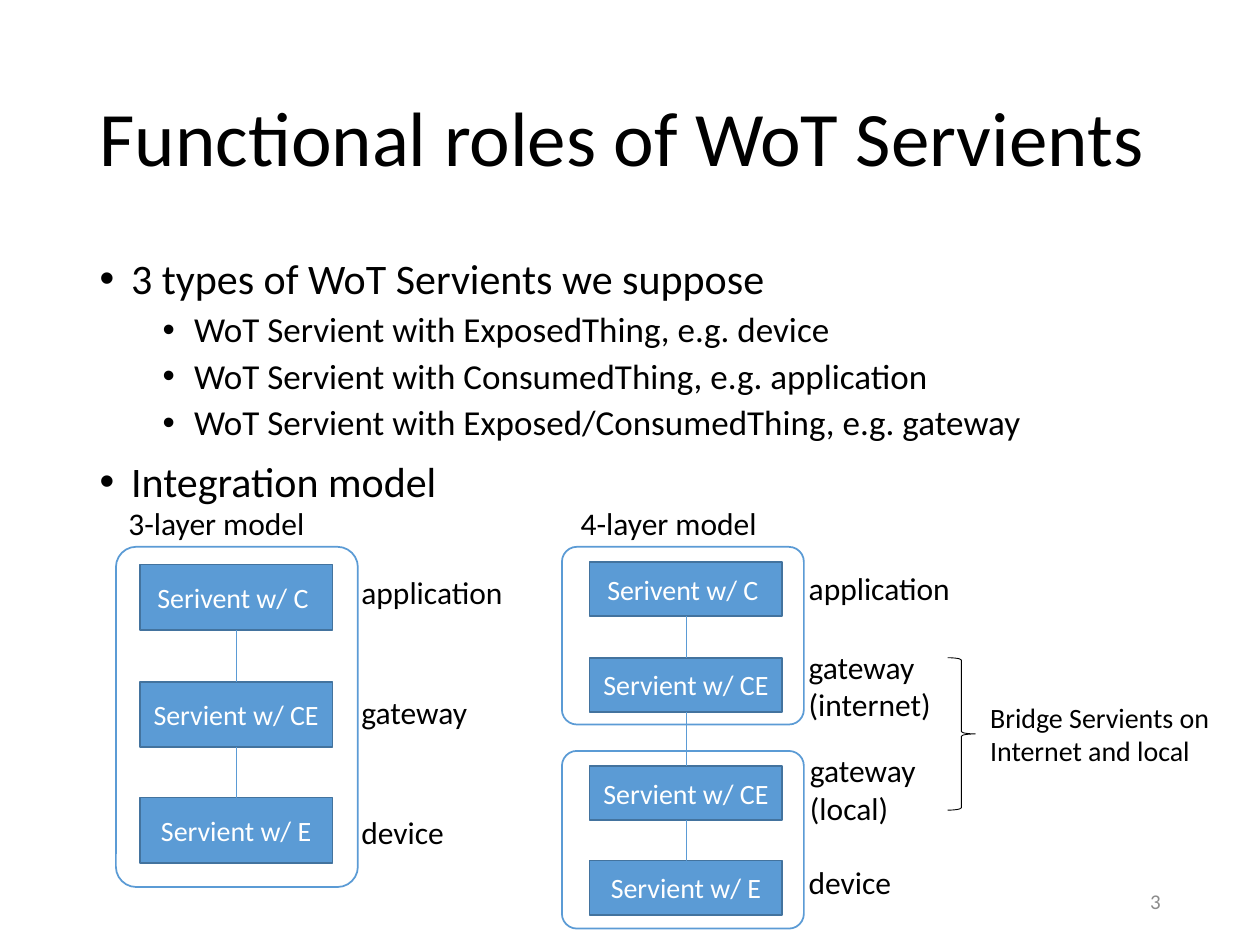
import pptx
import pptx.dml.color
import pptx.enum.shapes
import pptx.enum.text
import pptx.oxml
import pptx.oxml.ns
import pptx.util
from lxml import etree

Inches, Pt = pptx.util.Inches, pptx.util.Pt
SHAPES = pptx.enum.shapes.MSO_SHAPE
ALIGN = pptx.enum.text.PP_ALIGN
ANCHOR = pptx.enum.text.MSO_ANCHOR
FIT = pptx.enum.text.MSO_AUTO_SIZE
COLORS = {
    name: pptx.dml.color.RGBColor.from_string(value)
    for name, value in {
        "text": "000000", "servient": "5B9BD5", "edge": "43739E",
        "white": "FFFFFF", "number": "8C8C8C",
    }.items()
}


def write(paragraph, text, size, color="text"):
    run = paragraph.add_run()
    run.text = text
    run.font.name, run.font.size = "Calibri", Pt(size)
    run.font.color.rgb = COLORS[color]


def place(kind, left, top, width, height, line, weight, fill=None):
    """Add a preset shape without shadow; no fill unless one is named."""
    shape = slide.shapes.add_shape(
        kind, Inches(left), Inches(top), Inches(width), Inches(height))
    shape.shadow.inherit = False
    shape.line.color.rgb, shape.line.width = COLORS[line], Pt(weight)
    if fill:
        shape.fill.solid()
        shape.fill.fore_color.rgb = COLORS[fill]
    else:
        shape.fill.background()
    return shape


deck = pptx.Presentation()
deck.slide_width, deck.slide_height = Inches(10), Inches(7.5)
slide = deck.slides.add_slide(deck.slide_layouts[1])

# Title and list
title, roles = slide.shapes.title, slide.placeholders[1]
title.left, title.top, title.width, title.height = map(Inches, (0.69, 0.4, 8.62, 1.45))
roles.left, roles.top, roles.width, roles.height = map(Inches, (0.69, 2, 9.02, 2.71))
title.text_frame.vertical_anchor = ANCHOR.MIDDLE
for holder in (title, roles):
    holder.text_frame.auto_size = FIT.NONE
heading = title.text_frame.paragraphs[0]
heading.alignment, heading.line_spacing = ALIGN.LEFT, 0.9
write(heading, "Functional roles of WoT Servients", 44)

bullets = [
    (0, "3 types of WoT Servients we suppose"),
    (1, "WoT Servient with ExposedThing, e.g. device"),
    (1, "WoT Servient with ConsumedThing, e.g. application"),
    (1, "WoT Servient with Exposed/ConsumedThing, e.g. gateway"),
    (0, "Integration model"),
]
for index, (level, text) in enumerate(bullets):
    frame = roles.text_frame
    item = frame.add_paragraph() if index else frame.paragraphs[0]
    item.level, item.line_spacing = level, 0.9
    item.space_before = Pt(5 if level else 10)
    props = item._p.get_or_add_pPr()
    props.set("marL", str(Inches(0.25 + 0.5 * level)))
    props.set("indent", str(Inches(-0.25)))
    etree.SubElement(props, pptx.oxml.ns.qn("a:buFont")).set("typeface", "Arial")
    etree.SubElement(props, pptx.oxml.ns.qn("a:buChar")).set("char", "•")
    write(item, text, 20 if level else 24)

# Servient stacks: left, box height, and (top, text) of each layer
SERVIENT_WIDTH = 1.53
stacks = [
    (1.11, 0.52, [(4.48, "Serivent w/ C "), (5.41, "Servient w/ CE"),
                  (6.33, "Servient w/ E")]),
    (4.68, 0.43, [(4.46, "Serivent w/ C "), (5.22, "Servient w/ CE"),
                  (6.08, "Servient w/ CE"), (6.83, "Servient w/ E")]),
]
for left, height, layers in stacks:
    above = None
    for top, text in layers:
        servient = place(SHAPES.RECTANGLE, left, top, SERVIENT_WIDTH, height,
                         "edge", 1, "servient")
        frame = servient.text_frame
        frame.margin_left = frame.margin_right = Inches(0.04)
        frame.vertical_anchor = ANCHOR.MIDDLE
        frame.paragraphs[0].alignment = ALIGN.CENTER
        write(frame.paragraphs[0], text, 16, "white")
        if above is not None:
            link = slide.shapes.add_connector(
                pptx.enum.shapes.MSO_CONNECTOR.STRAIGHT, 0, 0, 0, 0)
            link.begin_connect(above, 2)
            link.end_connect(servient, 0)
            link.line.color.rgb, link.line.width = COLORS["servient"], Pt(0.5)
            etree.SubElement(link._element.spPr, pptx.oxml.ns.qn("a:effectLst"))
        above = servient

# Frames around the layers, and the brace over both gateways
for left, top, height in [(0.92, 4.34, 2.7), (4.46, 4.34, 1.41), (4.46, 5.96, 1.41)]:
    group = place(SHAPES.ROUNDED_RECTANGLE, left, top, 1.92, height, "servient", 1)
    group.adjustments[0] = 0.084
place(SHAPES.RIGHT_BRACE, 7.52, 5.22, 0.22, 1.21, "text", 0.5)

# Labels: left, top, width, lines
labels = [
    (0.92, 3.95, 1.62, ["3-layer model"]),
    (2.77, 4.5, 1.34, ["application"]),
    (2.77, 5.45, 1.05, ["gateway"]),
    (2.77, 6.4, 0.87, ["device"]),
    (4.51, 3.95, 1.67, ["4-layer model"]),
    (6.32, 4.47, 1.34, ["application"]),
    (6.32, 5.09, 1.18, ["gateway", "(internet)"]),
    (6.33, 5.91, 1.05, ["gateway", "(local)"]),
    (6.32, 6.8, 0.87, ["device"]),
]
for left, top, width, lines in labels:
    label = slide.shapes.add_textbox(
        Inches(left), Inches(top), Inches(width), Inches(0.09 + 0.31 * len(lines)))
    frame = label.text_frame
    frame.word_wrap, frame.auto_size = False, FIT.SHAPE_TO_FIT_TEXT
    for index, text in enumerate(lines):
        write(frame.add_paragraph() if index else frame.paragraphs[0], text, 18)

bridge = slide.shapes.add_textbox(Inches(7.76), Inches(5.51), Inches(2.12), Inches(0.64))
bridge.text_frame.word_wrap = True
bridge.text_frame.auto_size = FIT.SHAPE_TO_FIT_TEXT
write(bridge.text_frame.paragraphs[0], "Bridge Servients on Internet and local", 16)

page = slide.shapes.add_textbox(Inches(7.06), Inches(6.95), Inches(2.25), Inches(0.4))
page.text_frame.word_wrap = True
page.text_frame.vertical_anchor = ANCHOR.MIDDLE
page.text_frame.paragraphs[0].alignment = ALIGN.RIGHT
write(page.text_frame.paragraphs[0], "3", 12, "number")

deck.save("out.pptx")
